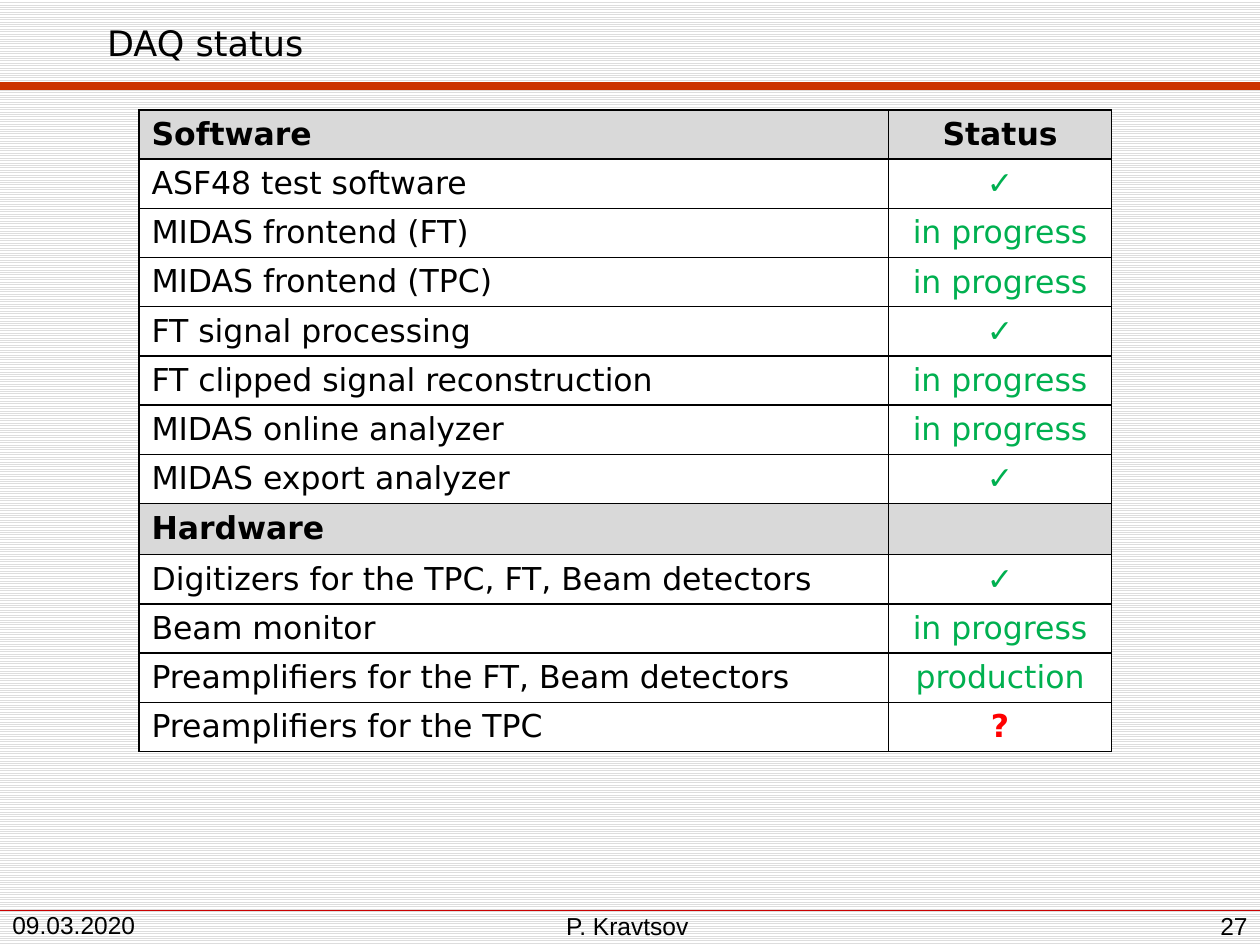
"""Build the DAQ status slide with its software and hardware table."""
from dataclasses import dataclass

from lxml.etree import SubElement
from pptx import Presentation
from pptx.dml.color import RGBColor
from pptx.enum.dml import MSO_PATTERN
from pptx.enum.shapes import MSO_CONNECTOR
from pptx.enum.text import MSO_ANCHOR, PP_ALIGN
from pptx.oxml.ns import qn
from pptx.util import Pt


@dataclass(frozen=True)
class Theme:
    body_font: str = "DejaVu Sans"
    footer_font: str = "Arial"
    title_size: int = 20
    table_size: int = 18
    footer_size: int = 14
    text: str = "000000"
    good: str = "00B050"
    open: str = "FF0000"
    section: str = "D9D9D9"
    paper: str = "FFFFFF"
    stripe: str = "DDDDDD"
    title_rule: str = "CC3300"
    footer_rule: str = "CC0000"


THEME = Theme()
WIDTH, HEIGHT = 720, 540
TITLE = "DAQ status"
DONE, ONGOING, UNKNOWN = "✓", "in progress", "?"
SECTIONS = [
    ("Software", "Status", [
        ("ASF48 test software", DONE),
        ("MIDAS frontend (FT)", ONGOING),
        ("MIDAS frontend (TPC)", ONGOING),
        ("FT signal processing", DONE),
        ("FT clipped signal reconstruction", ONGOING),
        ("MIDAS online analyzer", ONGOING),
        ("MIDAS export analyzer", DONE),
    ]),
    ("Hardware", "", [
        ("Digitizers for the TPC, FT, Beam detectors", DONE),
        ("Beam monitor", ONGOING),
        ("Preamplifiers for the FT, Beam detectors", "production"),
        ("Preamplifiers for the TPC", UNKNOWN),
    ]),
]
FOOTERS = [
    ("P. Kravtsov", (224, 522, 269, 18), PP_ALIGN.CENTER),
    ("09.03.2020", (0, 520, 130, 20), PP_ALIGN.LEFT),
    ("27", (552, 517, 168, 23), PP_ALIGN.RIGHT),
]
RULES = [(520, THEME.footer_rule, 0.25), (49, THEME.title_rule, 4.5)]
TABLE_LEFT, TABLE_TOP, ROW_HEIGHT = 79.4, 62.8, 28.1
COLUMNS = (428.4, 127.4)


def rgb(value):
    return RGBColor.from_string(value)


def write(frame, text, font, size, color=THEME.text, bold=False, align=PP_ALIGN.LEFT):
    paragraph = frame.paragraphs[0]
    paragraph.alignment = align
    if not text:
        return
    run = paragraph.add_run()
    run.text = text
    run.font.name = font
    run.font.size = Pt(size)
    run.font.bold = bold
    run.font.color.rgb = rgb(color)


def add_rule(slide, y, color, weight):
    rule = slide.shapes.add_connector(MSO_CONNECTOR.STRAIGHT, 0, Pt(y), Pt(WIDTH), Pt(y))
    rule.line.color.rgb = rgb(color)
    rule.line.width = Pt(weight)
    SubElement(rule._element.spPr, qn("a:effectLst"))


def add_title(slide):
    title = slide.shapes.title
    title.left, title.top, title.width, title.height = map(Pt, (54, 3, 647, 43))
    title.text_frame.vertical_anchor = MSO_ANCHOR.MIDDLE
    write(title.text_frame, TITLE, THEME.body_font, THEME.title_size)


def style_cell(cell, fill):
    properties = cell._tc.get_or_add_tcPr()
    for side in ("lnL", "lnR", "lnT", "lnB"):
        border = SubElement(properties, qn(f"a:{side}"), w=str(Pt(1)))
        solid = SubElement(border, qn("a:solidFill"))
        SubElement(solid, qn("a:srgbClr"), val=THEME.text)
    cell.fill.solid()
    cell.fill.fore_color.rgb = rgb(fill)


def add_status_table(slide):
    rows = []
    for section, heading, items in SECTIONS:
        rows.append((section, heading, True))
        rows += [(item, status, False) for item, status in items]
    table = slide.shapes.add_table(
        len(rows), len(COLUMNS), Pt(TABLE_LEFT), Pt(TABLE_TOP),
        Pt(sum(COLUMNS)), Pt(ROW_HEIGHT * len(rows))).table
    table.horz_banding = False
    for column, width in zip(table.columns, COLUMNS):
        column.width = Pt(width)
    for row, (item, status, is_section) in zip(table.rows, rows):
        row.height = Pt(ROW_HEIGHT)
        item_cell, status_cell = row.cells
        for cell in row.cells:
            style_cell(cell, THEME.section if is_section else THEME.paper)
        status_color = THEME.open if status == UNKNOWN else THEME.good
        write(item_cell.text_frame, item, THEME.body_font, THEME.table_size, bold=is_section)
        write(status_cell.text_frame, status, THEME.body_font, THEME.table_size,
              THEME.text if is_section else status_color,
              is_section or status in (DONE, UNKNOWN), PP_ALIGN.CENTER)
        if not is_section:
            status_cell.vertical_anchor = MSO_ANCHOR.MIDDLE


def add_footer(slide, text, box, align):
    frame = slide.shapes.add_textbox(*map(Pt, box)).text_frame
    frame.word_wrap = True
    frame.vertical_anchor = MSO_ANCHOR.BOTTOM
    frame.margin_bottom = Pt(2.9)
    write(frame, text, THEME.footer_font, THEME.footer_size, align=align)


def main():
    deck = Presentation()
    deck.slide_width, deck.slide_height = Pt(WIDTH), Pt(HEIGHT)
    slide = deck.slides.add_slide(deck.slide_layouts.get_by_name("Title Only"))
    backdrop = slide.background.fill
    backdrop.patterned()
    backdrop.pattern = MSO_PATTERN.LIGHT_HORIZONTAL
    backdrop.fore_color.rgb = rgb(THEME.stripe)
    backdrop.back_color.rgb = rgb(THEME.paper)
    for rule in RULES:
        add_rule(slide, *rule)
    add_title(slide)
    add_status_table(slide)
    for footer in FOOTERS:
        add_footer(slide, *footer)
    deck.save("out.pptx")


if __name__ == "__main__":
    main()
